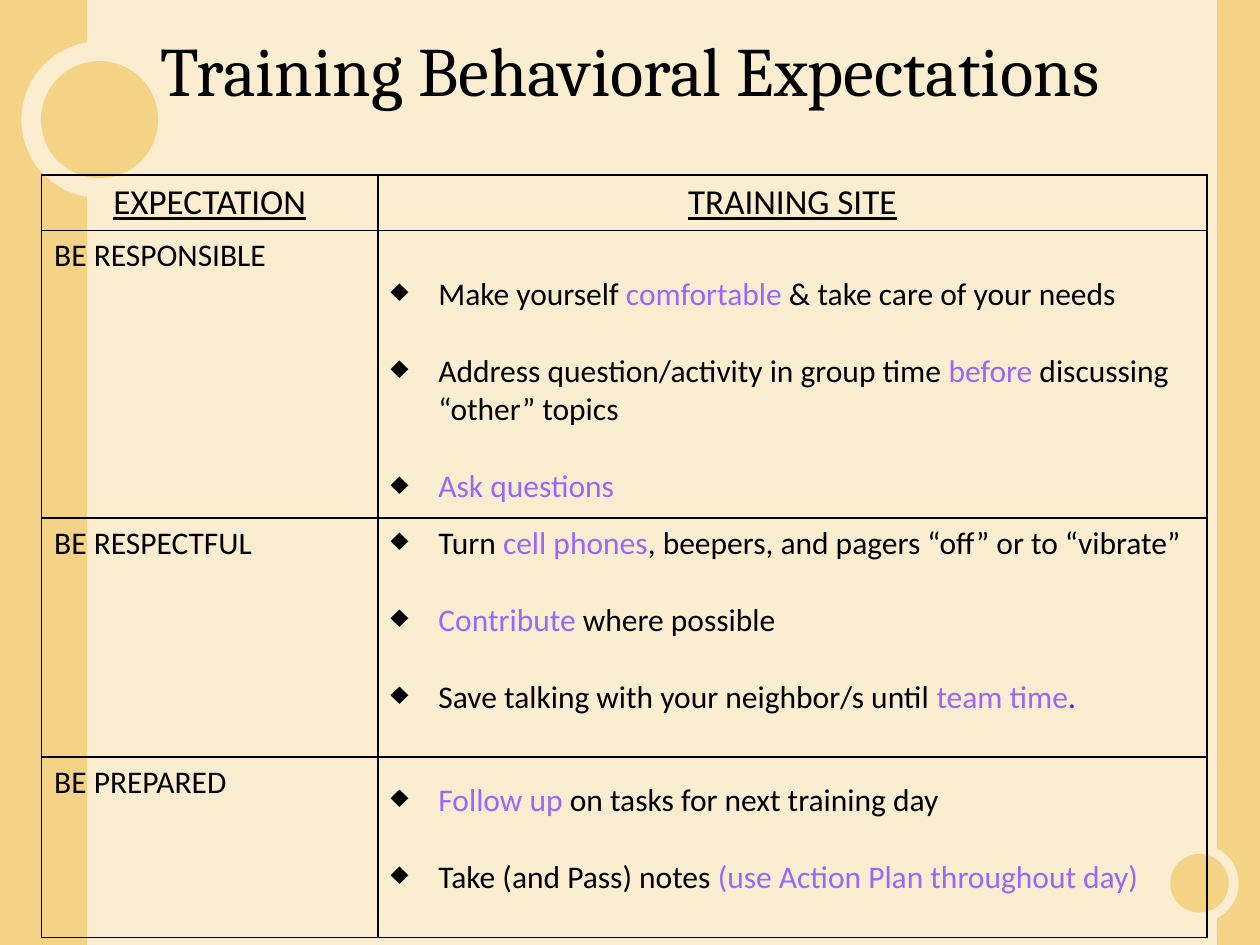
"""Build the training expectations slide on a grid of 100 columns by 75 rows."""
from dataclasses import dataclass

from lxml import etree
from pptx import Presentation
from pptx.dml.color import RGBColor
from pptx.enum.shapes import MSO_SHAPE
from pptx.enum.text import MSO_ANCHOR, PP_ALIGN
from pptx.oxml.ns import qn
from pptx.util import Emu, Inches, Pt

RECTANGLE, OVAL = MSO_SHAPE.RECTANGLE, MSO_SHAPE.OVAL
CENTER, LEFT, MIDDLE = PP_ALIGN.CENTER, PP_ALIGN.LEFT, MSO_ANCHOR.MIDDLE
CREAM, GOLD, BLACK, VIOLET, BLUE = "FBEDCF", "F4D387", "000000", "9966FF", "5E0DFF"
UNIT = Inches(0.1)
COLUMNS, ROWS = 100, 75
INDENT = 3.8
BLANK_LINE = 22


@dataclass
class Span:
    """A stretch of text in one colour."""

    text: str
    color: str = BLACK


@dataclass
class Expectation:
    """A table row: its name, guidelines, height and top margin."""

    name: str
    guidelines: list[list[Span]]
    height: float
    top_margin: float = 0.5


@dataclass
class Ring:
    """A gold disc inside a cream one, placed by its centre."""

    x: float
    y: float
    size: float


RINGS = [Ring(7.9, 9.5, 12.4), Ring(95.2, 70.1, 6.2)]
HEADINGS = ["EXPECTATION", "TRAINING SITE"]
COLUMN_WIDTHS = [26.7, 65.8]
HEADER_HEIGHT = 4.4
EXPECTATIONS = [
    Expectation("BE RESPONSIBLE", [
        [Span("Make yourself "), Span("comfortable ", VIOLET),
         Span("& take care of your needs")],
        [Span("Address question/activity in group time "), Span("before", VIOLET),
         Span(" discussing “other” topics")],
        [Span("Ask questions", VIOLET)],
    ], 22.8, 3.55),
    Expectation("BE RESPECTFUL", [
        [Span("Turn "), Span("cell phones", VIOLET),
         Span(", beepers, and pagers “off” or to “vibrate”")],
        [Span("Contribute ", VIOLET), Span("where possible")],
        [Span("Save talking with your neighbor/s until "),
         Span("team time", VIOLET), Span(".", BLUE)],
    ], 19),
    Expectation("BE PREPARED", [
        [Span("Follow up ", VIOLET), Span("on tasks for next training day")],
        [Span("Take (and Pass) notes "),
         Span("(use Action Plan throughout day)", VIOLET)],
    ], 14.3, 1.9),
]


def grid(count: float) -> Emu:
    """Turn grid units into a length."""
    return Emu(round(count * UNIT))


def rgb(color: str) -> RGBColor:
    """Turn a hex string into a colour."""
    return RGBColor.from_string(color)


def add_block(slide, kind, x: float, y: float, width: float, height: float,
              color: str) -> None:
    """Draw a plain filled shape."""
    shape = slide.shapes.add_shape(kind, grid(x), grid(y), grid(width), grid(height))
    shape.shadow.inherit = False
    shape.fill.solid()
    shape.fill.fore_color.rgb = rgb(color)
    shape.line.fill.background()


def add_ring(slide, ring: Ring) -> None:
    """Draw the two discs of a ring."""
    for size, color in ((ring.size, CREAM), (ring.size * 0.75, GOLD)):
        add_block(slide, OVAL, ring.x - size / 2, ring.y - size / 2, size, size, color)


def write(para, text: str, *, size: float = 18, color: str = BLACK,
          font: str = "Calibri", underline: bool = False, align=LEFT) -> None:
    """Add formatted text to a paragraph."""
    para.alignment = align
    run = para.add_run()
    run.text = text
    run.font.size, run.font.name = Pt(size), font
    run.font.underline = underline
    run.font.color.rgb = rgb(color)


def add_bullet(para) -> None:
    """Give a paragraph a black diamond and a hanging indent."""
    properties = para._p.get_or_add_pPr()
    properties.set("marL", str(grid(INDENT)))
    properties.set("indent", str(-grid(INDENT)))
    tint = etree.SubElement(properties, qn("a:buClr"))
    etree.SubElement(tint, qn("a:srgbClr"), val=BLACK)
    etree.SubElement(properties, qn("a:buChar"), char="♦")


def style_cell(cell) -> None:
    """Give a cell black borders and no fill."""
    properties = cell._tc.get_or_add_tcPr()
    for side in ("L", "R", "T", "B"):
        line = etree.SubElement(properties, qn(f"a:ln{side}"), w=str(Pt(1)))
        fill = etree.SubElement(line, qn("a:solidFill"))
        etree.SubElement(fill, qn("a:srgbClr"), val=BLACK)
    cell.fill.background()


def fill_guidelines(cell, expectation: Expectation) -> None:
    """Write the bulleted guidelines of an expectation."""
    cell.margin_top = grid(expectation.top_margin)
    frame = cell.text_frame
    for index, spans in enumerate(expectation.guidelines):
        para = frame.add_paragraph() if index else frame.paragraphs[0]
        add_bullet(para)
        if index:
            para.space_before = Pt(BLANK_LINE)
        for span in spans:
            write(para, span.text, color=span.color)


def add_expectations(slide, x: float, y: float) -> None:
    """Draw the table of expectations."""
    heights = [HEADER_HEIGHT] + [item.height for item in EXPECTATIONS]
    table = slide.shapes.add_table(
        len(heights), len(HEADINGS), grid(x), grid(y),
        grid(sum(COLUMN_WIDTHS)), grid(sum(heights))).table
    table.first_row = table.horz_banding = False
    for column, width in zip(table.columns, COLUMN_WIDTHS):
        column.width = grid(width)
    for row, height in zip(table.rows, heights):
        row.height = grid(height)
    for cell in table.iter_cells():
        style_cell(cell)
    for index, heading in enumerate(HEADINGS):
        write(table.cell(0, index).text_frame.paragraphs[0], heading,
              size=20, underline=True, align=CENTER)
    for index, item in enumerate(EXPECTATIONS, start=1):
        write(table.cell(index, 0).text_frame.paragraphs[0], item.name)
        fill_guidelines(table.cell(index, 1), item)


def add_title(slide, text: str) -> None:
    """Write the slide title."""
    box = slide.shapes.add_textbox(grid(5), grid(1.7), grid(90), grid(7.6))
    frame = box.text_frame
    frame.word_wrap = True
    frame.vertical_anchor = MIDDLE
    write(frame.paragraphs[0], text, size=39.6, font="Cambria", align=CENTER)


def main() -> None:
    """Build and save the deck."""
    deck = Presentation()
    deck.slide_width, deck.slide_height = grid(COLUMNS), grid(ROWS)
    page = deck.slides.add_slide(deck.slide_layouts[6])
    page.background.fill.solid()
    page.background.fill.fore_color.rgb = rgb(CREAM)
    for x, width in ((96.6, 3.4), (0, 6.9)):
        add_block(page, RECTANGLE, x, 0, width, ROWS, GOLD)
    for ring in RINGS:
        add_ring(page, ring)
    add_title(page, "Training Behavioral Expectations")
    add_expectations(page, 3.3, 13.9)
    deck.save("out.pptx")


if __name__ == "__main__":
    main()
